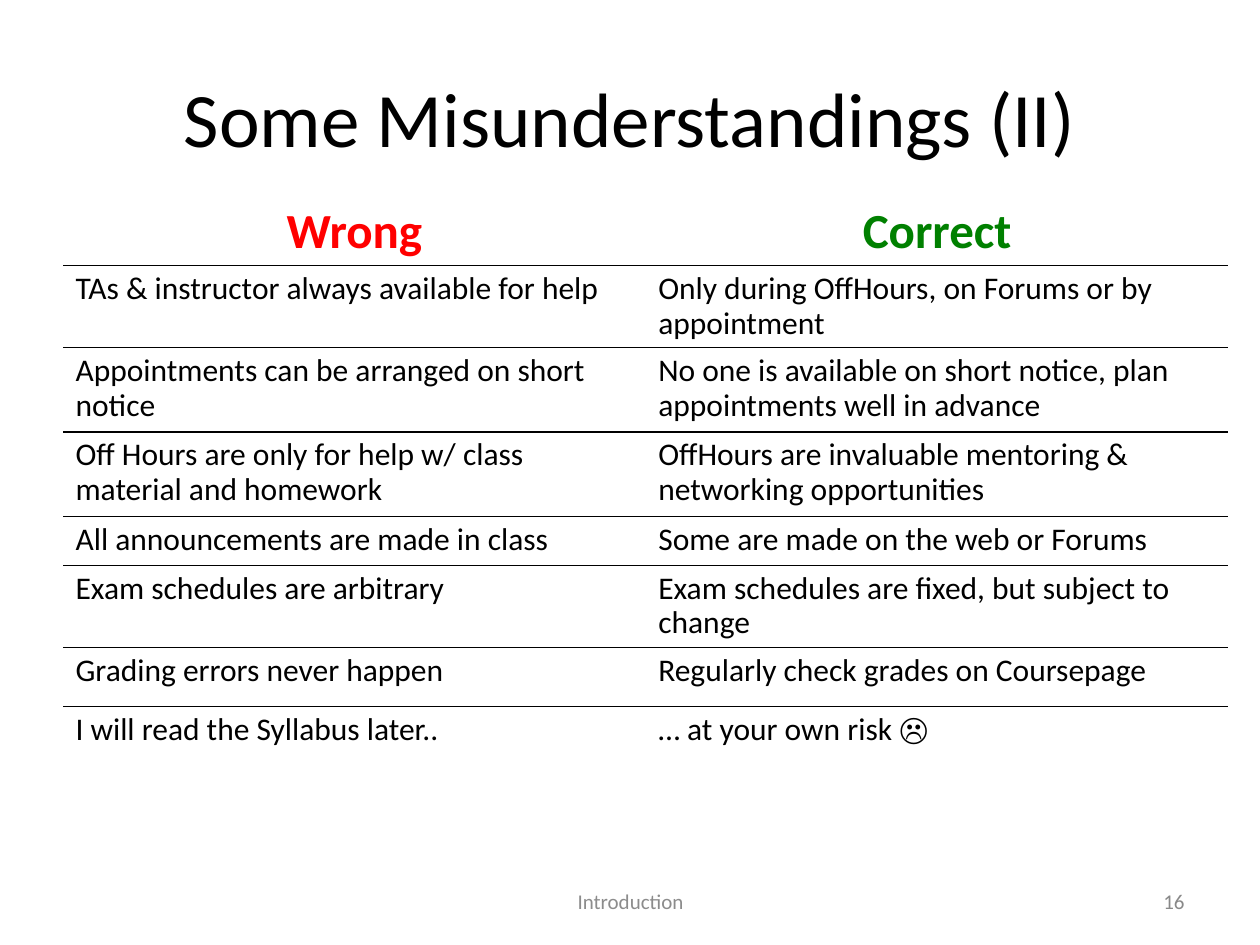
from pptx import Presentation
from pptx.dml.color import RGBColor
from pptx.enum.text import MSO_ANCHOR as Anchor, PP_ALIGN as Align
from pptx.oxml import parse_xml
from pptx.oxml.ns import nsdecls
from pptx.util import Inches, Pt

FONT = "Calibri"
BLACK, RED, GREEN = "000000", "FF0000", "008000"
COLUMN_WIDTH = 4.625
ROW_HEIGHTS = [0.52, 0.65, 0.67, 0.67, 0.39, 0.64, 0.47, 0.5]
HEADINGS = [("Wrong", RED), ("Correct", GREEN)]
MISUNDERSTANDINGS = [
    ("TAs & instructor always available for help",
     "Only during OffHours, on Forums or by appointment"),
    ("Appointments can be arranged on short notice",
     "No one is available on short notice, plan appointments well in advance"),
    ("Off Hours are only for help w/ class material and homework",
     "OffHours are invaluable mentoring & networking opportunities"),
    ("All announcements are made in class",
     "Some are made on the web or Forums"),
    ("Exam schedules are arbitrary",
     "Exam schedules are fixed, but subject to change"),
    ("Grading errors never happen",
     "Regularly check grades on Coursepage"),
    ("I will read the Syllabus later..",
     "… at your own risk ☹"),
]


def color(code):
    """Turn a hex string into a colour."""
    return RGBColor.from_string(code)


def write(frame, text, size, code, align, bold=False, spacing=None):
    """Write one formatted run into the first paragraph of a text frame."""
    para = frame.paragraphs[0]
    para.alignment = align
    if spacing:
        para.line_spacing = spacing
    span = para.add_run()
    span.text = text
    span.font.name = FONT
    span.font.size = Pt(size)
    span.font.bold = bold
    span.font.color.rgb = color(code)


def add_title(page, text):
    """Place and fill the title placeholder."""
    box = page.shapes.title
    box.left, box.top = Inches(0.5), Inches(0.3)
    box.width, box.height = Inches(9), Inches(1.25)
    box.text_frame.vertical_anchor = Anchor.MIDDLE
    write(box.text_frame, text, 44, BLACK, Align.CENTER)


def add_footer(page, text, left, width, code, align):
    """Add a small text box on the footer line."""
    box = page.shapes.add_textbox(Inches(left), Inches(6.95),
                                  Inches(width), Inches(0.4))
    box.text_frame.word_wrap = True
    box.text_frame.vertical_anchor = Anchor.MIDDLE
    write(box.text_frame, text, 12, code, align)


def set_borders(cell, ruled_sides):
    """Rule the named sides of a cell and clear the others."""
    properties = cell._tc.get_or_add_tcPr()
    for position, side in enumerate("LRTB"):
        if side in ruled_sides:
            paint = f'<a:solidFill><a:srgbClr val="{BLACK}"/></a:solidFill>'
        else:
            paint = "<a:noFill/>"
        properties.insert(position, parse_xml(
            f'<a:ln{side} {nsdecls("a")} w="{Pt(1)}">{paint}</a:ln{side}>'))


def add_comparison(page):
    """Add the two-column table with rules between its rows."""
    last = len(ROW_HEIGHTS) - 1
    table = page.shapes.add_table(
        len(ROW_HEIGHTS), len(HEADINGS), Inches(0.5), Inches(1.58),
        Inches(COLUMN_WIDTH * 2), Inches(sum(ROW_HEIGHTS))).table
    table.first_row = table.horz_banding = False
    for column in table.columns:
        column.width = Inches(COLUMN_WIDTH)
    for index, height in enumerate(ROW_HEIGHTS):
        table.rows[index].height = Inches(height)
        ruled_sides = ("T" if index > 0 else "") + ("B" if index < last else "")
        for side, cell in enumerate(table.rows[index].cells):
            cell.fill.background()
            set_borders(cell, ruled_sides)
            if index == 0:
                text, code = HEADINGS[side]
                write(cell.text_frame, text, 28, code, Align.CENTER, True, 0.9)
            else:
                write(cell.text_frame, MISUNDERSTANDINGS[index - 1][side],
                      18, BLACK, Align.LEFT, spacing=0.9)


def main():
    """Build the slide and save it."""
    deck = Presentation()
    deck.slide_width, deck.slide_height = Inches(10), Inches(7.5)
    page = deck.slides.add_slide(deck.slide_layouts[5])
    add_title(page, "Some Misunderstandings (II)")
    add_comparison(page)
    add_footer(page, "16", 7.17, 2.33, "898989", Align.RIGHT)
    add_footer(page, "Introduction", 3.42, 3.17, "8C8C8C", Align.CENTER)
    deck.save("out.pptx")


main()
